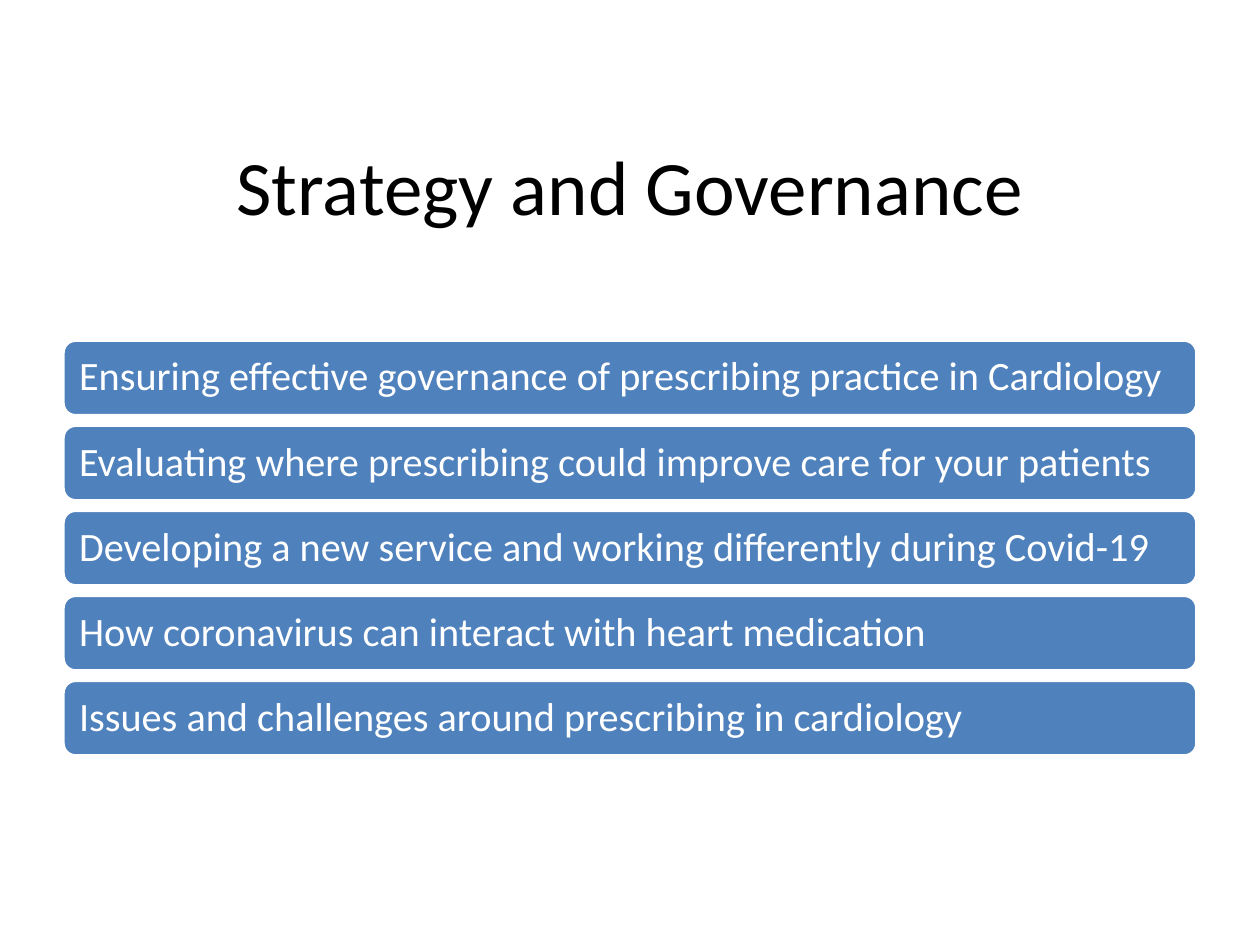
from pptx import Presentation
from pptx.dml.color import RGBColor
from pptx.enum.shapes import MSO_SHAPE
from pptx.enum.text import MSO_ANCHOR, PP_ALIGN
from pptx.util import Pt

BLACK = RGBColor(0x00, 0x00, 0x00)
WHITE = RGBColor(0xFF, 0xFF, 0xFF)
BLUE = RGBColor(0x4F, 0x81, 0xBD)
FONT = "Calibri"
TOPICS = [
    "Ensuring effective governance of prescribing practice in Cardiology",
    "Evaluating where prescribing could improve care for your patients",
    "Developing a new service and working differently during Covid-19",
    "How coronavirus can interact with heart medication",
    "Issues and challenges around prescribing in cardiology",
]


def write_text(s, text, size, color, align):
    tf = s.text_frame
    tf.word_wrap = True
    tf.vertical_anchor = MSO_ANCHOR.MIDDLE
    p = tf.paragraphs[0]
    p.text = text
    p.alignment = align
    p.font.name = FONT
    p.font.size = Pt(size)
    p.font.color.rgb = color
    return p


def add_title(slide, text, left, top, width, height):
    s = slide.shapes.add_textbox(Pt(left), Pt(top), Pt(width), Pt(height))
    write_text(s, text, 44, BLACK, PP_ALIGN.CENTER)


def add_topic_bars(slide, topics, left, top, width, height, gap=5.4):
    bar_height = (height - gap * (len(topics) - 1)) / len(topics)
    for i, topic in enumerate(topics):
        s = slide.shapes.add_shape(
            MSO_SHAPE.ROUNDED_RECTANGLE,
            Pt(left), Pt(top + i * (bar_height + gap)), Pt(width), Pt(bar_height),
        )
        s.shadow.inherit = False
        s.fill.solid()
        s.fill.fore_color.rgb = BLUE
        s.line.color.rgb = WHITE
        s.line.width = Pt(2)
        tf = s.text_frame
        tf.margin_left = tf.margin_right = tf.margin_top = tf.margin_bottom = Pt(7.2)
        p = write_text(s, topic, 23, WHITE, PP_ALIGN.LEFT)
        p.line_spacing = 0.9


def main():
    prs = Presentation()
    prs.slide_width, prs.slide_height = Pt(720), Pt(540)
    slide = prs.slides.add_slide(prs.slide_layouts[6])
    add_title(slide, "Strategy and Governance", 36, 72.7, 648, 65.5)
    add_topic_bars(slide, TOPICS, 36, 194.4, 648, 237.6)
    prs.save("out.pptx")


if __name__ == "__main__":
    main()
